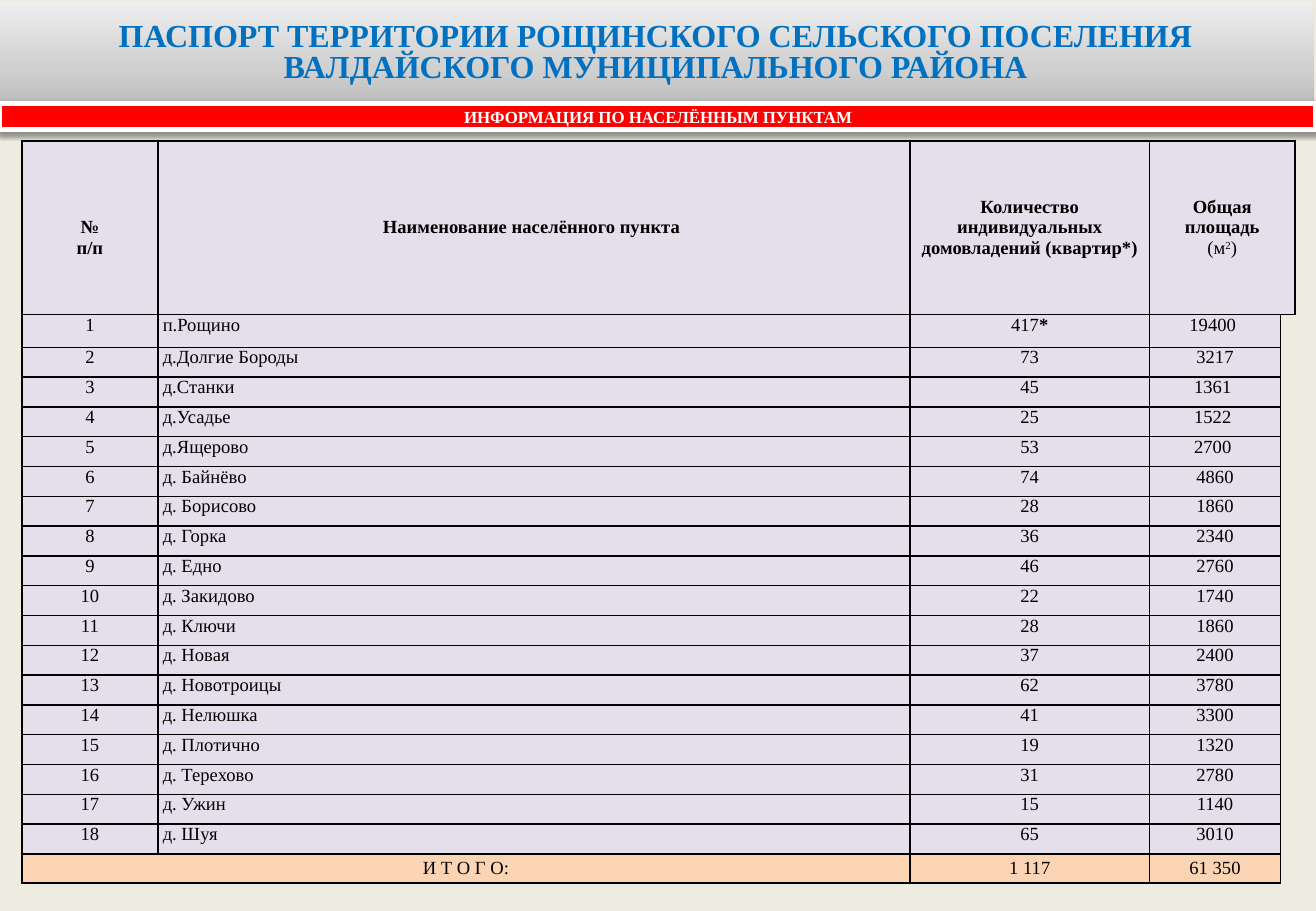
from lxml import etree
from pptx import Presentation
from pptx import util as u
from pptx.dml.color import RGBColor
from pptx.enum import shapes, text
from pptx.oxml import parse_xml

NS = 'xmlns:a="http://schemas.openxmlformats.org/drawingml/2006/main"'
HUES = {"page": "EEECE1", "title": "0070C0", "bar": "FF0000", "white": "FFFFFF",
        "ink": "000000", "cell": "E5DFEC", "total": "FBD4B4"}
RGB = {name: RGBColor.from_string(hue) for name, hue in HUES.items()}
WIDE, HIGH = u.Inches(10.83), u.Inches(7.5)
MID, FULL = text.PP_ALIGN.CENTER, text.PP_ALIGN.JUSTIFY


def put(frame, lines, size, hue="ink", bold=False, align=MID, gap=None):
    """Write lines of (text, bold, baseline) runs; a plain string is one run."""
    for i, line in enumerate(lines):
        para = frame.add_paragraph() if i else frame.paragraphs[0]
        para.alignment, para.line_spacing = align, gap
        for words, heavy, base in [(line, bold, 0)] if isinstance(line, str) else line:
            run = para.add_run()
            run.text = words
            look = {"size": u.Pt(size), "name": "Times New Roman", "bold": heavy}
            for key, value in look.items():
                setattr(run.font, key, value)
            run.font.color.rgb = RGB[hue]
            if base:
                run._r.get_or_add_rPr().set("baseline", str(base * 1000))


def shade(shape, blur):
    """Give a banner its soft shadow below and its text margins."""
    shape._element.spPr.append(parse_xml(
        f'<a:effectLst {NS}><a:outerShdw blurRad="{u.Pt(blur)}" dist="{u.Pt(1.6)}" '
        f'dir="5400000" rotWithShape="0"><a:srgbClr val="{HUES["ink"]}">'
        '<a:alpha val="38000"/></a:srgbClr></a:outerShdw></a:effectLst>'))
    form = {"margin_left": u.Inches(0.07), "margin_right": u.Inches(0.07),
            "margin_top": u.Inches(0.04), "margin_bottom": u.Inches(0.04),
            "word_wrap": True, "auto_size": text.MSO_AUTO_SIZE.NONE,
            "vertical_anchor": text.MSO_ANCHOR.MIDDLE}
    for key, value in form.items():
        setattr(shape.text_frame, key, value)


deck = Presentation()
deck.slide_width, deck.slide_height = WIDE, HIGH
slide = deck.slides.add_slide(deck.slide_layouts[5])
slide.background.fill.solid()
slide.background.fill.fore_color.rgb = RGB["page"]

# Title banner
title = slide.shapes.title
title.left, title.top = u.Inches(-0.02), u.Inches(0.02)
title.width, title.height = WIDE, u.Inches(0.84)
stops = "".join(f'<a:gs pos="{spot * 1000}"><a:srgbClr val="{hue}"/></a:gs>'
                for spot, hue in ((0, "BCBCBC"), (35, "D0D0D0"), (100, "EDEDED")))
title._element.spPr.append(parse_xml(
    f'<a:gradFill {NS} rotWithShape="1"><a:gsLst>{stops}</a:gsLst>'
    '<a:lin ang="16200000" scaled="0"/></a:gradFill>'))
shade(title, 0)
put(title.text_frame, ["ПАСПОРТ ТЕРРИТОРИИ РОЩИНСКОГО СЕЛЬСКОГО ПОСЕЛЕНИЯ "
                       "ВАЛДАЙСКОГО МУНИЦИПАЛЬНОГО РАЙОНА"], 19, "title", True, gap=0.8)

# Red bar
bar = slide.shapes.add_shape(shapes.MSO_SHAPE.RECTANGLE, 0, u.Inches(0.85),
                             WIDE, u.Inches(0.22))
bar.fill.solid()
bar.fill.fore_color.rgb = RGB["bar"]
bar.line.color.rgb = RGB["white"]
bar.line.width = u.Pt(3)
shade(bar, 3.1)
put(bar.text_frame, ["ИНФОРМАЦИЯ ПО НАСЕЛЁННЫМ ПУНКТАМ"], 10, "white", True)

# Table of settlements
towns = [
    ("п.Рощино", [("417", False, 0), ("*", True, 0)], "19400 "),
    ("д.Долгие Бороды", "73", "3217"), ("д.Станки", "45", "1361 "),
    ("д.Усадье", "25", "1522 "), ("д.Ящерово", "53", "2700 "),
    ("д. Байнёво", "74", "4860"), ("д. Борисово", "28", "1860"),
    ("д. Горка", "36", "2340"), ("д. Едно", "46", "2760"),
    ("д. Закидово", "22", "1740"), ("д. Ключи", "28", "1860"),
    ("д. Новая", "37", "2400"), ("д. Новотроицы", "62", "3780"),
    ("д. Нелюшка", "41", "3300"), ("д. Плотично", "19", "1320"),
    ("д. Терехово", "31", "2780"), ("д. Ужин", "15", "1140"),
    ("д. Шуя", "65", "3010"),
]
head = [["№", "п/п"], ["Наименование населённого пункта "],
        ["Количество индивидуальных домовладений (квартир*)"],
        [[("Общая площадь", True, 0)],
         [("(м", False, 0), ("2", False, 30), (")", False, 0)]], []]
body = [[[str(n)], *([item] for item in town), []] for n, town in enumerate(towns, 1)]
rows = [head, *body, [["И Т О Г О:"], [], ["1 117"], ["61 350"], []]]
cols = [1.12, 6.19, 1.97, 1.08, 0.07]
last, edge = len(rows) - 1, len(cols) - 1
tall = [1.43, 0.27] + [4.17 / 17] * 17 + [0.24]

grid = slide.shapes.add_table(len(rows), len(cols), u.Inches(0.18), u.Inches(1.16),
                              u.Inches(sum(cols)), u.Inches(sum(tall))).table
grid.first_row = grid.horz_banding = False
for col, size in zip(grid.columns, cols):
    col.width = u.Inches(size)
for row, size in zip(grid.rows, tall):
    row.height = u.Inches(size)
grid.cell(0, edge - 1).merge(grid.cell(0, edge))
grid.cell(last, 0).merge(grid.cell(last, 1))

for r, row in enumerate(rows):
    for c, lines in enumerate(row):
        cell = grid.cell(r, c)
        blank = c == edge and r > 0
        cell.margin_left = cell.margin_right = u.Inches(0.04)
        cell.margin_top = u.Inches(0.17 if r == c == 0 else 0)
        cell.margin_bottom = 0
        middle = r in (0, last)
        cell.vertical_anchor = text.MSO_ANCHOR.MIDDLE if middle else text.MSO_ANCHOR.TOP
        prop = cell._tc.get_or_add_tcPr()
        for side in "LRTB":
            drawn = not blank or side == "L" or (side == "T" and r == 1)
            paint = (f'<a:solidFill><a:srgbClr val="{HUES["ink"]}"/></a:solidFill>'
                     if drawn else "<a:noFill/>")
            prop.append(parse_xml(f'<a:ln{side} {NS} w="{u.Pt(1)}">{paint}</a:ln{side}>'))
        if blank:
            cell.fill.background()
        else:
            cell.fill.solid()
            cell.fill.fore_color.rgb = RGB["total" if r == last else "cell"]
        if lines:
            put(cell.text_frame, lines, 11, bold=r == 0,
                align=FULL if c == 1 and r else MID)
        else:
            para = cell.text_frame.paragraphs[0]._p
            etree.SubElement(para, para.tag[:-1] + "endParaRPr", sz="1100")

deck.save("out.pptx")
